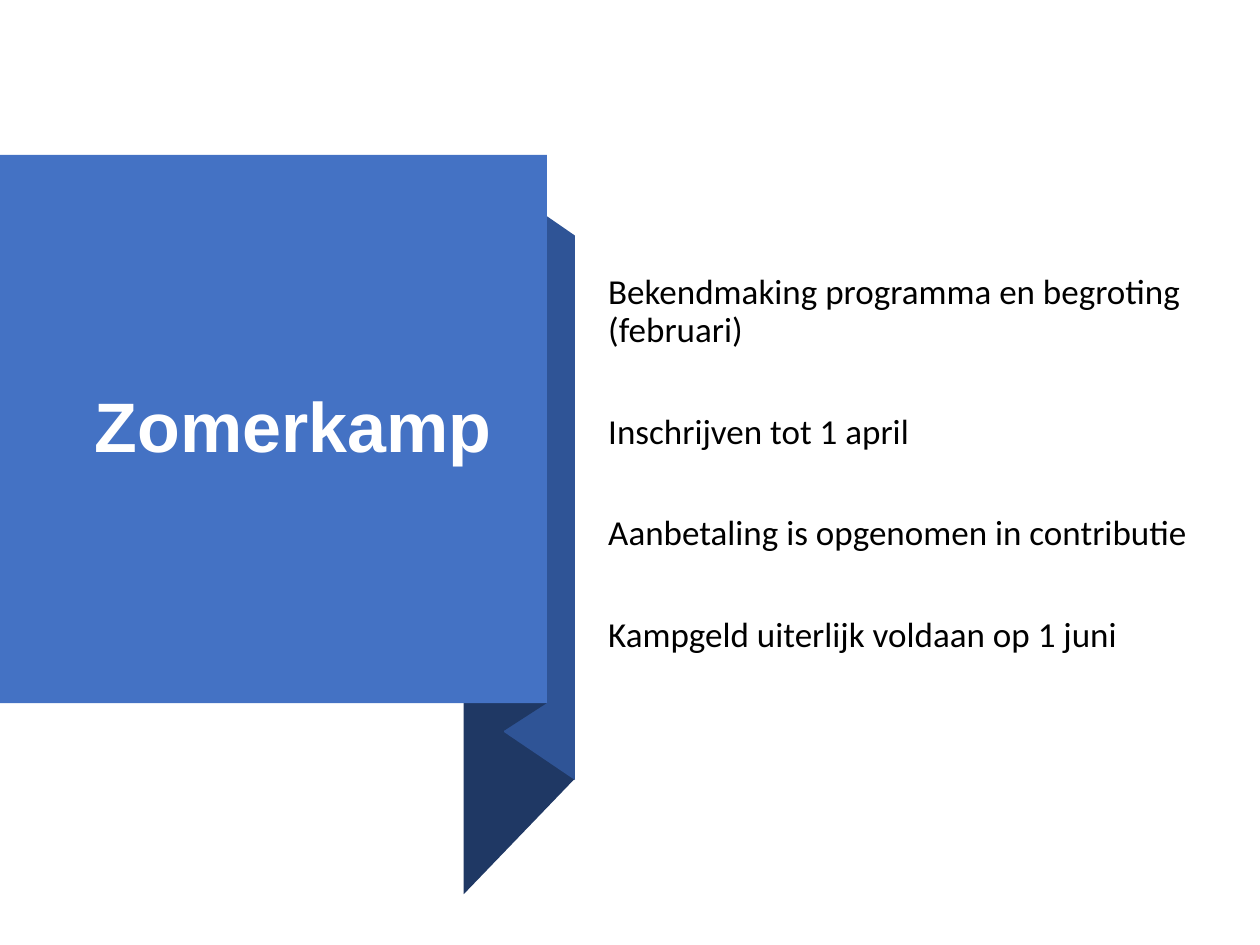
from pptx import Presentation
from pptx.dml.color import RGBColor
from pptx.enum.shapes import MSO_SHAPE
from pptx.enum.text import MSO_ANCHOR, MSO_AUTO_SIZE, PP_ALIGN
from pptx.util import Pt

BLUE, MID_BLUE, DARK_BLUE = "4472C4", "2F5496", "1F3864"
TITLE_FONT = {"name": "Arial", "size": Pt(40), "bold": True}
BODY_FONT = {"name": "Calibri", "size": Pt(20), "bold": False}
FRAME = {
    "word_wrap": True, "auto_size": MSO_AUTO_SIZE.NONE,
    "margin_left": Pt(7.2), "margin_right": Pt(7.2),
    "margin_top": Pt(3.6), "margin_bottom": Pt(3.6),
}
RIBBON_FOLDS = [
    (DARK_BLUE, [(328.5, 445), (265, 511), (265, 204.5), (328.5, 138.2)]),
    (MID_BLUE, [(328.5, 445.7), (288, 418.3), (288, 106.6), (328.5, 134.6)]),
    (DARK_BLUE, [(312.5, 401.8), (288, 417.6), (288, 105.1), (312.5, 89.3)]),
]
CAMP_STEPS = [
    "Bekendmaking programma en begroting (februari)",
    "Inschrijven tot 1 april",
    "Aanbetaling is opgenomen in contributie",
    "Kampgeld uiterlijk voldaan op 1 juni",
]


def color(value):
    return RGBColor.from_string(value)


def set_values(target, values):
    for name, value in values.items():
        setattr(target, name, value)


class SlideBuilder:
    def __init__(self, slide):
        self.slide = slide

    def paint(self, shape, fill):
        """Give a shape a plain fill without line or shadow."""
        shape.shadow.inherit = False
        shape.fill.solid()
        shape.fill.fore_color.rgb = color(fill)
        shape.line.fill.background()

    def polygon(self, points, fill):
        start, *others = [(Pt(x), Pt(y)) for x, y in points]
        builder = self.slide.shapes.build_freeform(*start)
        builder.add_line_segments(others, close=True)
        self.paint(builder.convert_to_shape(), fill)

    def rectangle(self, box, fill):
        shape = self.slide.shapes.add_shape(MSO_SHAPE.RECTANGLE, *map(Pt, box))
        self.paint(shape, fill)

    def fill_frame(self, frame, lines, font, font_color, anchor, gap=0):
        set_values(frame, {**FRAME, "vertical_anchor": anchor})
        for index, line in enumerate(lines):
            paragraph = frame.add_paragraph() if index else frame.paragraphs[0]
            paragraph.text = line
            set_values(paragraph, {
                "alignment": PP_ALIGN.LEFT, "line_spacing": 0.9,
                "space_before": Pt(gap if index else 0),
            })
            set_values(paragraph.font, font)
            paragraph.font.color.rgb = color(font_color)

    def title(self, box, text):
        """Fill the title placeholder and bring it to the front."""
        title = self.slide.shapes.title
        set_values(title, dict(zip(("left", "top", "width", "height"), map(Pt, box))))
        self.fill_frame(title.text_frame, [text], TITLE_FONT, "FFFFFF", MSO_ANCHOR.MIDDLE)
        title.element.getparent().append(title.element)

    def text(self, box, lines, gap):
        frame = self.slide.shapes.add_textbox(*map(Pt, box)).text_frame
        self.fill_frame(frame, lines, BODY_FONT, "000000", MSO_ANCHOR.TOP, gap)


def main():
    presentation = Presentation()
    set_values(presentation, {"slide_width": Pt(720), "slide_height": Pt(540)})
    slide = presentation.slides.add_slide(presentation.slide_layouts.get_by_name("Title Only"))
    builder = SlideBuilder(slide)
    for fill, points in RIBBON_FOLDS:
        builder.polygon(points, fill)
    builder.rectangle((0, 88.5, 312.5, 313.3), BLUE)
    builder.title((47, 106.5, 255.5, 278.6), "Zomerkamp")
    builder.text((340.5, 153.4, 364.3, 231.8), CAMP_STEPS, gap=36.4)
    presentation.save("out.pptx")


if __name__ == "__main__":
    main()
